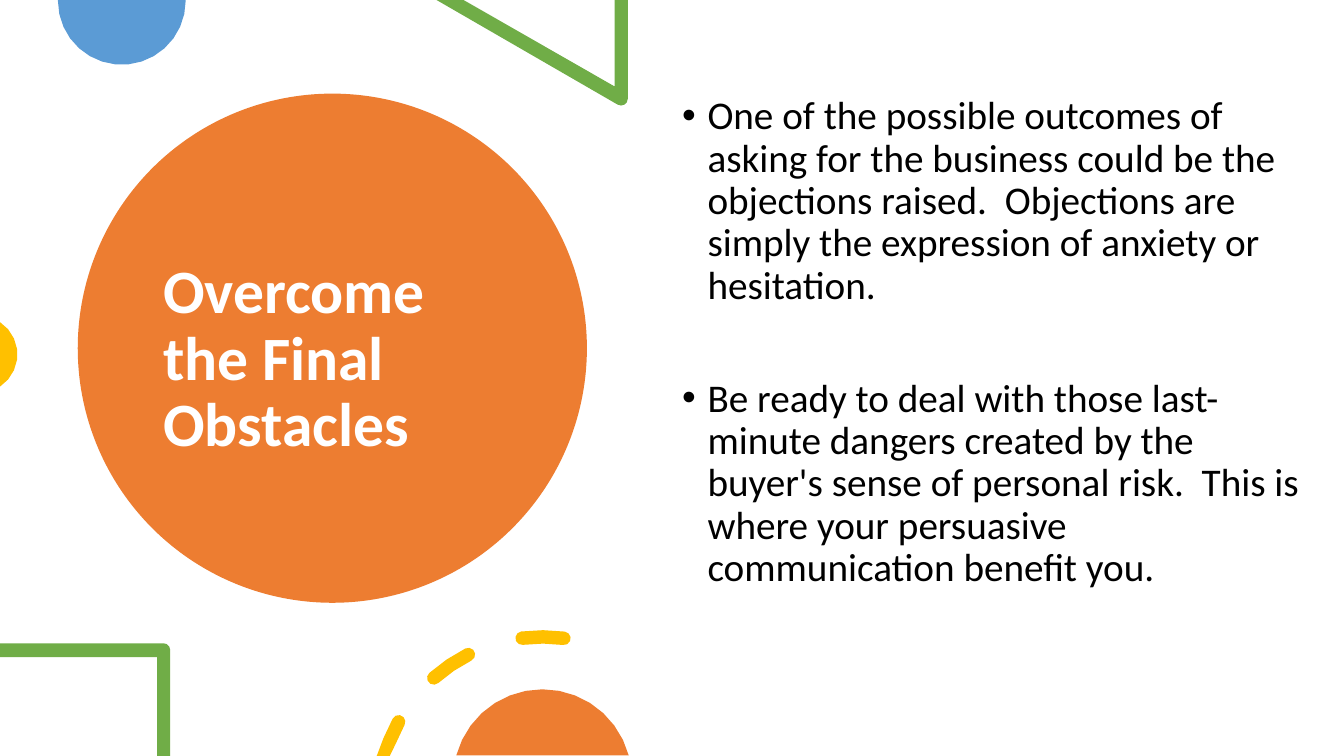
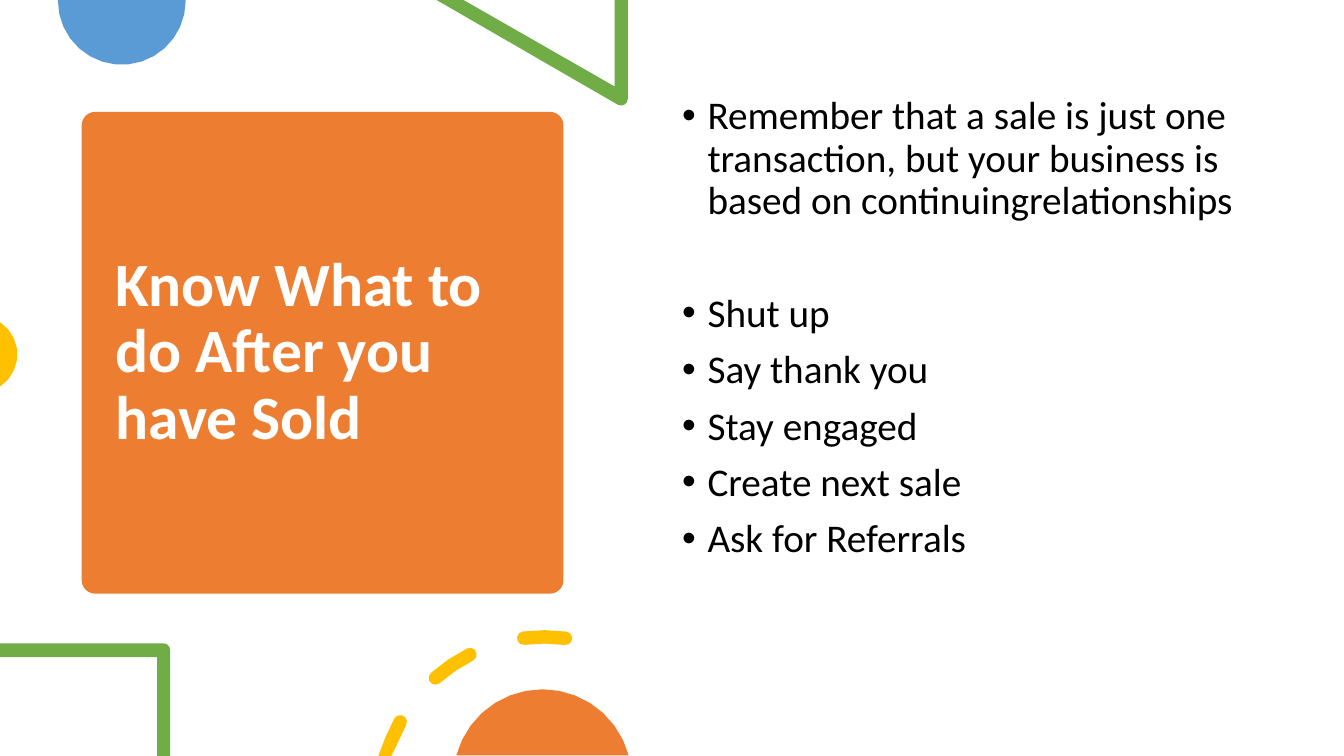
import math

import pptx
import pptx.dml.color
import pptx.enum.shapes
import pptx.enum.text
import pptx.oxml.ns
import pptx.util
from lxml import etree

Cm = pptx.util.Cm
Pt = pptx.util.Pt
Kind = pptx.enum.shapes.MSO_SHAPE

COLORS = {
    "orange": "ED7D31",
    "blue": "5B9BD5",
    "green": "70AD47",
    "gold": "FFC000",
    "white": "FFFFFF",
    "black": "000000",
}
FONT = "Calibri"
HIGH = 19.05
PANEL = (0, 0, 15.82, HIGH)
CAP = 0.17


def tint(name):
    """Return the named colour."""
    return pptx.dml.color.RGBColor.from_string(COLORS[name])


def paint(shape, color):
    """Give a shape a flat fill without line or shadow."""
    shape.shadow.inherit = False
    shape.fill.solid()
    shape.fill.fore_color.rgb = tint(color)
    shape.line.fill.background()


def spot(x, y, r, angle):
    """Return the point on a circle at a clockwise angle in degrees."""
    turn = math.radians(angle)
    return x + r * math.cos(turn), y + r * math.sin(turn)


def arc(x, y, r, start, end):
    """Return just enough points along an arc for it to look smooth."""
    step = math.degrees(2 * math.acos(1 - 0.01 / r))
    count = math.ceil(abs(end - start) / step)
    return [spot(x, y, r, start + (end - start) * i / count) for i in range(count + 1)]


def form(page, box, color, *loops):
    """Draw closed outlines relative to a box, cut at its left and lower edges."""
    left, top, _, high = box
    pen = None
    for loop in loops:
        ends = [(Cm(left + max(x, 0)), Cm(top + min(y, high))) for x, y in loop]
        if pen is None:
            pen = page.shapes.build_freeform(*ends[0])
        else:
            pen.move_to(*ends[0])
        pen.add_line_segments(ends[1:], close=True)
    paint(pen.convert_to_shape(), color)


def dash(x, y, r, start, end):
    """Return the outline of a curved dash with round ends."""
    return (
        arc(x, y, r + CAP, start, end)
        + arc(*spot(x, y, r, end), CAP, end, end + 180)[1:]
        + arc(x, y, r - CAP, end, start)[1:]
        + arc(*spot(x, y, r, start), CAP, start + 180, start + 360)[1:-1]
    )


def decor(page, box, shift):
    """Draw the cut-off shapes around the edges of the left panel."""
    _, _, wide, high = box
    form(page, box, "blue", [(1.46, 0)] + arc(3.07, 0.02, 1.61, 180, 0) + [(4.68, 0)])
    form(page, box, "green",
         [(wide, 0), (wide - 0.33, 0), (wide - 0.33, 2.18), (11.68, 0), (11, 0)]
         + arc(wide - CAP, 2.49, CAP, 120, 0))
    form(page, box, "gold", arc(-0.53, 8.93, 0.97, -57, 57))
    form(page, box, "green",
         [(0, high - 2.49), (0, high - 2.84)]
         + arc(4.12, high - 2.67, CAP, -90, 0)
         + [(4.29, high), (3.96, high), (3.96, high - 2.49)])
    x = wide - 2.15
    starts = [194.3 + 34.3 * i for i in range(3)]
    form(page, box, "gold",
         *[dash(x + shift, high + 1.14, 4.14, a, a + 14.6) for a in starts])
    form(page, box, "orange", arc(x, high + 0.57, 2.25, 195, 345))


def write(page, box, lines, size, color, bold=False):
    """Add a wrapped text box and return its frame."""
    frame = page.shapes.add_textbox(*map(Cm, box)).text_frame
    frame.word_wrap = True
    frame.text = "\n".join(lines)
    for para in frame.paragraphs:
        para.line_spacing = 0.9
        for run in para.runs:
            font = run.font
            font.name, font.size, font.bold = FONT, Pt(size), bold
            font.color.rgb = tint(color)
    return frame


def badge(page, box, kind, pads, title):
    """Draw the orange shape with the title set inside its pads."""
    shape = page.shapes.add_shape(kind, *map(Cm, box))
    paint(shape, "orange")
    if kind == Kind.ROUNDED_RECTANGLE:
        shape.adjustments[0] = 0.028
    x, y, wide, high = box
    left, top, right, low = pads
    inner = (x + left, y + top, wide - left - right, high - top - low)
    frame = write(page, inner, [title], 44, "white", True)
    frame.vertical_anchor = pptx.enum.text.MSO_ANCHOR.MIDDLE


def points(page, box, lines):
    """Write a bullet list with a wide gap after its first item."""
    frame = write(page, box, lines, 28, "black")
    for i, para in enumerate(frame.paragraphs):
        para.space_before = Pt(50.5 if i == 1 else 10)
        props = para._p.get_or_add_pPr()
        props.set("marL", str(Cm(0.64)))
        props.set("indent", str(-Cm(0.64)))
        for tag, key, value in (("a:buFont", "typeface", "Arial"), ("a:buChar", "char", "•")):
            etree.SubElement(props, pptx.oxml.ns.qn(tag)).set(key, value)


def build(deck, kind, box, pads, title, wide, lines, shift=0):
    """Add one slide with a title badge, edge shapes and bullets."""
    page = deck.slides.add_slide(deck.slide_layouts[6])
    badge(page, box, kind, pads, title)
    decor(page, PANEL, shift)
    points(page, (16.94, 2.29, wide, 13.59), lines)


def main():
    """Build and save the deck."""
    deck = pptx.Presentation()
    deck.slide_height = Cm(HIGH)
    deck.slide_width = deck.slide_height * 16 // 9
    build(deck, Kind.OVAL, (1.96, 2.36, 12.83, 12.83), (1.9, 1.07, 1.94, 0.46),
          "Overcome the Final Obstacles", 16.31, [
              "One of the possible outcomes of asking for the business could be the "
              "objections raised.  Objections are simply the expression of anxiety or "
              "hesitation.",
              "Be ready to deal with those last-minute dangers created by the buyer's "
              "sense of personal risk.  This is where your persuasive communication "
              "benefit you.",
          ])
    build(deck, Kind.ROUNDED_RECTANGLE, (2.06, 2.82, 12.14, 12.14), (0.6, 0.28, 0.6, 0.28),
          "Know What to do After you have Sold", 14.6, [
              "Remember that a sale is just one transaction, but your business is "
              "based on continuingrelationships",
              "Shut up",
              "Say thank you",
              "Stay engaged",
              "Create next sale",
              "Ask for Referrals",
          ], 0.04)
    deck.save("out.pptx")


if __name__ == "__main__":
    main()
